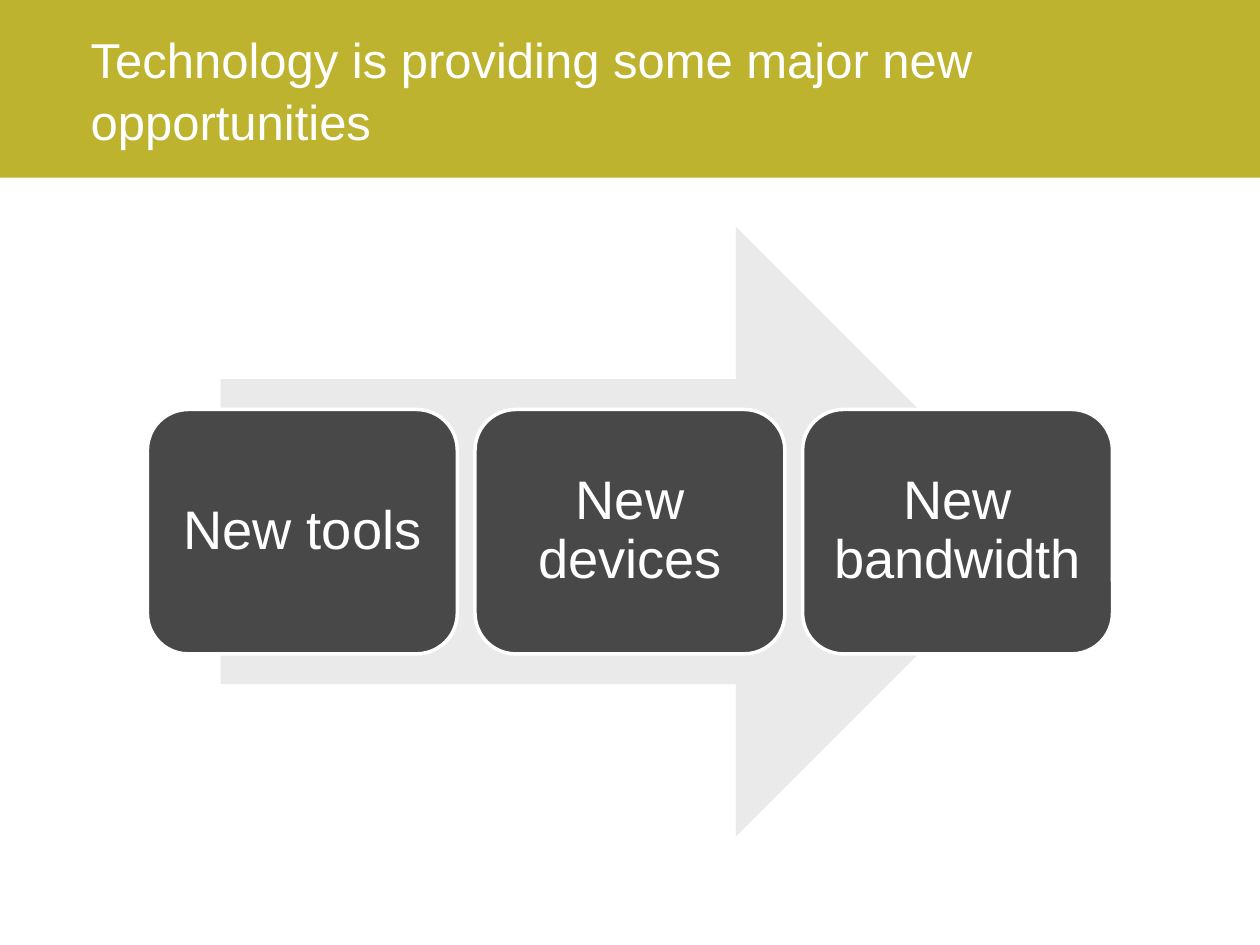
from dataclasses import dataclass

from pptx import Presentation
from pptx.dml.color import RGBColor
from pptx.enum import shapes, text
from pptx.util import Pt

OLIVE = RGBColor(0xBD, 0xB3, 0x2E)
PALE_GREY = RGBColor(0xEA, 0xEA, 0xEA)
DARK_GREY = RGBColor(0x48, 0x48, 0x48)
WHITE = RGBColor(0xFF, 0xFF, 0xFF)
FONT = "Arial"


@dataclass(frozen=True)
class Box:
    left: float
    top: float
    width: float
    height: float

    def lengths(self) -> tuple:
        return Pt(self.left), Pt(self.top), Pt(self.width), Pt(self.height)


BAND = Box(0, 0, 720, 101.5)
TITLE = Box(44.64, 11.52, 646.56, 74.88)
ARROW = Box(126, 129.6, 468.72, 348.48)
FIRST_CARD = Box(84.24, 234, 177.12, 139.68)
CARD_PITCH = 187.2
CARD_INSET = 9.36
OPPORTUNITIES = ["New tools", "New devices", "New bandwidth"]


def add_filled(slide, kind, box: Box, fill: RGBColor):
    shape = slide.shapes.add_shape(kind, *box.lengths())
    shape.shadow.inherit = False
    shape.fill.solid()
    shape.fill.fore_color.rgb = fill
    shape.line.fill.background()
    return shape


def format_paragraph(paragraph, size: float, alignment, spacing: float) -> None:
    paragraph.alignment = alignment
    paragraph.line_spacing = spacing
    paragraph.font.name = FONT
    paragraph.font.size = Pt(size)
    paragraph.font.color.rgb = WHITE


def add_card(slide, label: str, box: Box) -> None:
    card = add_filled(slide, shapes.MSO_SHAPE.ROUNDED_RECTANGLE, box, DARK_GREY)
    card.line.color.rgb = WHITE
    card.line.width = Pt(2)
    frame = card.text_frame
    frame.word_wrap = True
    frame.vertical_anchor = text.MSO_ANCHOR.MIDDLE
    frame.margin_left = frame.margin_right = Pt(CARD_INSET)
    frame.margin_top = frame.margin_bottom = Pt(CARD_INSET)
    frame.text = label
    format_paragraph(frame.paragraphs[0], 31, text.PP_ALIGN.CENTER, 0.9)


def main() -> None:
    presentation = Presentation()
    presentation.slide_width, presentation.slide_height = Pt(720), Pt(540)
    slide = presentation.slides.add_slide(presentation.slide_layouts[5])

    # Title on its coloured band; the band goes behind the placeholder
    title = slide.shapes.title
    title.left, title.top, title.width, title.height = TITLE.lengths()
    frame = title.text_frame
    frame.text = "Technology is providing some major new opportunities"
    frame.word_wrap = True
    frame.auto_size = text.MSO_AUTO_SIZE.NONE
    frame.vertical_anchor = text.MSO_ANCHOR.TOP
    format_paragraph(frame.paragraphs[0], 28, text.PP_ALIGN.LEFT, 1.05)
    band = add_filled(slide, shapes.MSO_SHAPE.RECTANGLE, BAND, OLIVE)
    title.element.addprevious(band.element)

    # Arrow with the row of cards across it
    add_filled(slide, shapes.MSO_SHAPE.RIGHT_ARROW, ARROW, PALE_GREY)
    for index, label in enumerate(OPPORTUNITIES):
        left = FIRST_CARD.left + index * CARD_PITCH
        add_card(slide, label,
                 Box(left, FIRST_CARD.top, FIRST_CARD.width, FIRST_CARD.height))

    presentation.save("out.pptx")


if __name__ == "__main__":
    main()
